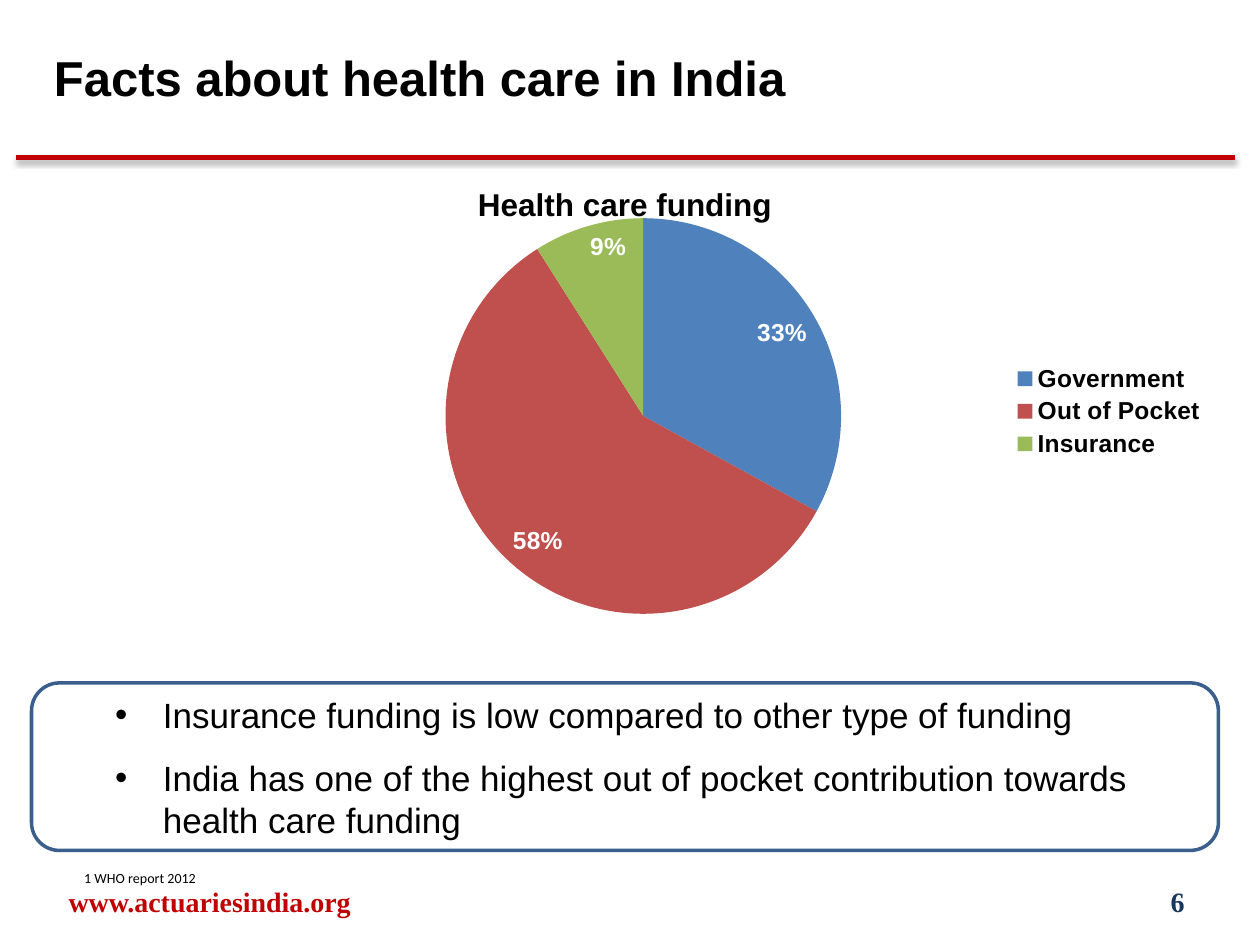
from lxml import etree
from pptx import Presentation
from pptx.chart.data import CategoryChartData
from pptx.dml.color import RGBColor
from pptx.enum.chart import XL_CHART_TYPE as ChartType
from pptx.enum.chart import XL_LABEL_POSITION as LabelPosition
from pptx.enum.chart import XL_LEGEND_POSITION as LegendPosition
from pptx.enum.shapes import MSO_CONNECTOR as Connector
from pptx.enum.shapes import MSO_SHAPE as Shape
from pptx.enum.text import MSO_ANCHOR as Anchor
from pptx.enum.text import PP_ALIGN as Align
from pptx.oxml import parse_xml
from pptx.oxml.ns import nsdecls, qn
from pptx.util import Inches, Pt

TITLE = "Facts about health care in India"
CHART_TITLE = "Health care funding"
FUNDING = [  # source, share, slice colour
    ("Government", 0.33, "4F81BD"),
    ("Out of Pocket", 0.58, "C0504D"),
    ("Insurance", 0.09, "9BBB59"),
]
FINDINGS = [
    "Insurance funding is low compared to other type of funding",
    "India has one of the highest out of pocket contribution towards "
    "health care funding",
]
FOOTNOTE = "1 WHO report 2012"
WEBSITE = "www.actuariesindia.org"
PAGE = "6"


class Theme:
    sans, serif, small = "Arial", "Times New Roman", "Calibri"
    black, white, red, navy, border = "000000", "FFFFFF", "C00000", "17375E", "3A5F8C"
    title, chart_title, body, footer, chart, note = 28, 18, 20, 16, 14, 8


PLOT = {"x": 0.111, "y": 0.114, "w": 0.809, "h": 0.791}  # shares of the chart
PANEL_LEFT, PANEL_WIDTH = 0.25, 9.42


def box(left, top, width, height):
    return [Inches(length) for length in (left, top, width, height)]


def style_font(font, size, color=Theme.black, face=Theme.sans, bold=False):
    font.size, font.name, font.bold = Pt(size), face, bold
    font.color.rgb = RGBColor.from_string(color)


def write(frame, paragraphs, align=Align.LEFT, anchor=Anchor.TOP, wrap=True,
          bullets=False, gap=0, **font_format):
    """Fill a text frame, with gap points between its paragraphs."""
    frame.word_wrap, frame.vertical_anchor = wrap, anchor
    for index, text in enumerate(paragraphs):
        paragraph = frame.add_paragraph() if index else frame.paragraphs[0]
        paragraph.text, paragraph.alignment = text, align
        if index < len(paragraphs) - 1:
            paragraph.space_after = Pt(gap)
        if bullets:
            paragraph.level = 1
            properties = paragraph._p.get_or_add_pPr()
            properties.set("marL", str(Inches(0.88)))
            properties.set("indent", str(Inches(-0.38)))
            properties.append(parse_xml(
                f'<a:buFont {nsdecls("a")} typeface="Arial"/>'))
            properties.append(parse_xml(f'<a:buChar {nsdecls("a")} char="•"/>'))
        style_font(paragraph.runs[0].font, **font_format)


def add_text(slide, text, place, **text_format):
    write(slide.shapes.add_textbox(*box(*place)).text_frame, [text], **text_format)


def add_title_rule(slide):
    rule = slide.shapes.add_connector(
        Connector.STRAIGHT, Inches(0.13), Inches(1.25), Inches(9.8), Inches(1.25))
    rule.line.color.rgb = RGBColor.from_string(Theme.red)
    rule.line.width = Pt(3)
    rule._element.spPr.append(parse_xml(
        f'<a:effectLst {nsdecls("a")}>'
        f'<a:outerShdw blurRad="{Pt(3.1)}" dist="{Pt(1.6)}" dir="5400000" rotWithShape="0">'
        f'<a:srgbClr val="{Theme.black}"><a:alpha val="38000"/></a:srgbClr>'
        '</a:outerShdw></a:effectLst>'))


def add_findings(slide):
    panel = slide.shapes.add_shape(
        Shape.ROUNDED_RECTANGLE, *box(PANEL_LEFT, 5.42, PANEL_WIDTH, 1.33))
    panel.shadow.inherit = False
    panel.fill.solid()
    panel.fill.fore_color.rgb = RGBColor.from_string(Theme.white)
    panel.line.color.rgb = RGBColor.from_string(Theme.border)
    panel.line.width = Pt(2)
    write(panel.text_frame, FINDINGS, anchor=Anchor.MIDDLE, bullets=True, gap=12,
          size=Theme.body)


def set_plot_layout(chart):
    """Fix the inner plot area at the shares given in PLOT."""
    plot_area = chart._chartSpace.chart.plotArea
    for old in plot_area.findall(qn("c:layout")):
        plot_area.remove(old)
    layout = parse_xml(f'<c:layout {nsdecls("c")}><c:manualLayout/></c:layout>')
    settings = [("layoutTarget", "inner"), ("xMode", "edge"), ("yMode", "edge")]
    for tag, value in settings + list(PLOT.items()):
        etree.SubElement(layout[0], qn(f"c:{tag}")).set("val", str(value))
    plot_area.insert(0, layout)


def add_funding_chart(slide):
    sources, shares, colors = zip(*FUNDING)
    data = CategoryChartData(number_format="0%")
    data.categories = sources
    data.add_series("Series 1", shares)
    chart = slide.shapes.add_chart(
        ChartType.PIE, *box(PANEL_LEFT, 1.28, PANEL_WIDTH, 3.97), data).chart
    style_font(chart.font, 10, face=Theme.small)
    chart.has_title = True
    write(chart.chart_title.text_frame, [CHART_TITLE], align=Align.CENTER,
          size=Theme.chart_title, bold=True)
    chart.has_legend = True
    chart.legend.position = LegendPosition.RIGHT
    chart.legend.include_in_layout = False
    style_font(chart.legend.font, Theme.chart, bold=True)

    pie = chart.plots[0]
    pie.vary_by_categories = True
    for index, color in enumerate(colors):
        fill = pie.series[0].points[index].format.fill
        fill.solid()
        fill.fore_color.rgb = RGBColor.from_string(color)
    labels = pie.series[0].data_labels
    labels.show_value = True
    labels.show_percentage = False
    labels.number_format, labels.number_format_is_linked = "0%", False
    labels.position = LabelPosition.INSIDE_END
    style_font(labels.font, Theme.chart, Theme.white, bold=True)
    set_plot_layout(chart)


def main():
    deck = Presentation()
    deck.slide_width, deck.slide_height = Inches(10), Inches(7.5)
    slide = deck.slides.add_slide(deck.slide_layouts[6])
    footer = dict(anchor=Anchor.MIDDLE, size=Theme.footer, face=Theme.serif, bold=True)

    add_title_rule(slide)
    add_text(slide, WEBSITE, (0.08, 6.95, 3.17, 0.4), align=Align.CENTER,
             color=Theme.red, **footer)
    add_text(slide, PAGE, (7.17, 6.95, 2.33, 0.4), align=Align.RIGHT,
             color=Theme.navy, **footer)
    add_text(slide, FOOTNOTE, (0.57, 6.85, 1.09, 0.24), wrap=False,
             size=Theme.note, face=Theme.small)
    add_findings(slide)
    add_funding_chart(slide)
    add_text(slide, TITLE, (0.33, 0.33, 8.25, 0.67), size=Theme.title, bold=True)
    deck.save("out.pptx")


if __name__ == "__main__":
    main()
